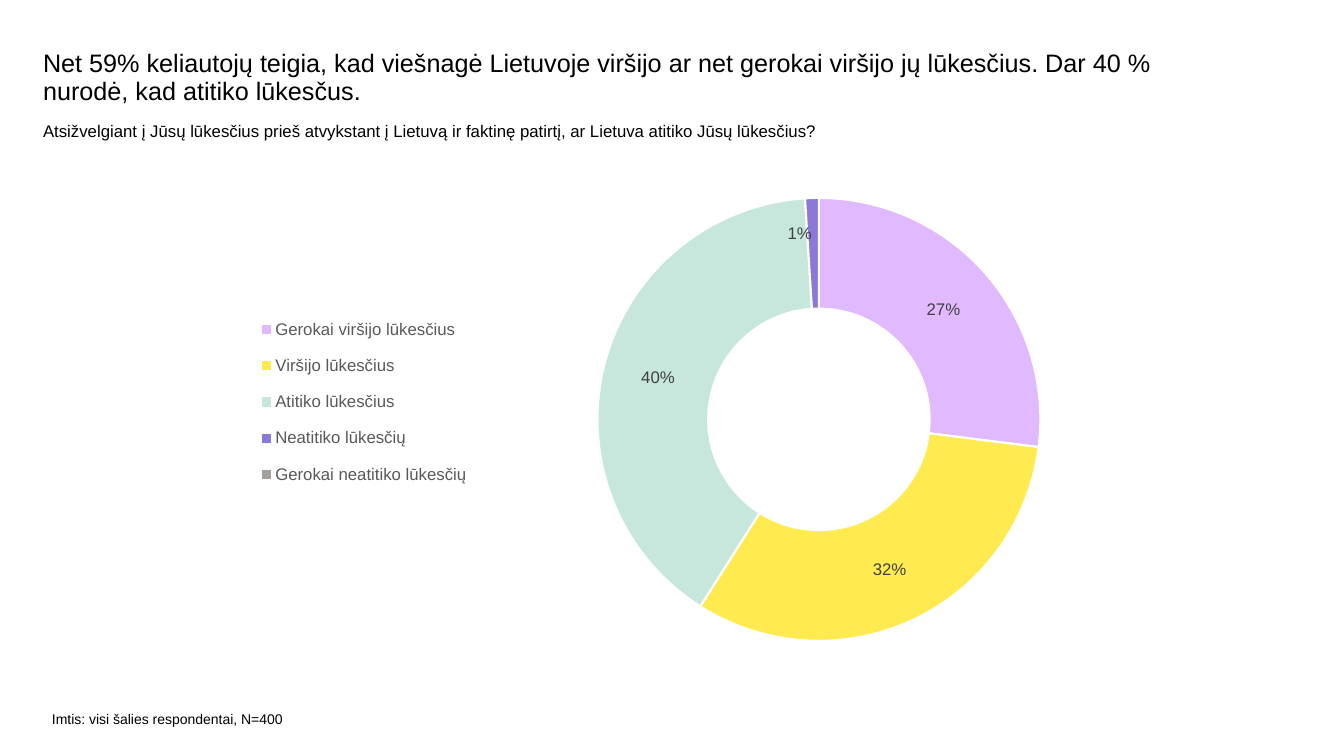
from lxml import etree
from pptx import Presentation
from pptx.chart.data import CategoryChartData
from pptx.dml.color import RGBColor
from pptx.enum.chart import XL_CHART_TYPE, XL_LEGEND_POSITION
from pptx.oxml.ns import qn
from pptx.util import Emu, Pt

DOUGHNUT = XL_CHART_TYPE.DOUGHNUT
LEGEND_BOTTOM = XL_LEGEND_POSITION.BOTTOM

FONT = "Arial"
TEXTS = [
    ("Net 59% keliautojų teigia, kad viešnagė Lietuvoje viršijo ar net gerokai viršijo jų lūkesčius. "
     "Dar 40 % nurodė, kad atitiko lūkesčus.", (43, 51, 1134, 61), 18, 0.9),
    ("Atsižvelgiant į Jūsų lūkesčius prieš atvykstant į Lietuvą ir faktinę patirtį, "
     "ar Lietuva atitiko Jūsų lūkesčius?", (43, 121, 1199, 61), 12, 1),
    ("Imtis: visi šalies respondentai, N=400", (52, 711, 389, 28), 10, 1),
]
ANSWERS = [
    ("Gerokai viršijo lūkesčius", 0.27, "E1B9FF"),
    ("Viršijo lūkesčius", 0.32, "FFEB50"),
    ("Atitiko lūkesčius", 0.4, "C7E6DC"),
    ("Neatitiko lūkesčių", 0.01, "8C78D7"),
    ("Gerokai neatitiko lūkesčių", 0, "A5A09B"),
]
CHART_BOX = (218, 165, 960, 516)
PLOT_BOX = (379, 33, 444, 443)
LEGEND_BOX = (43, 137, 206, 200)
LABEL_SHIFTS = {3: (-14, -20), 4: (15, 22)}
HOLE = 50
SCALE = 914400 / 100.8


def px(n):
    return Emu(round(n * SCALE))


def color(value):
    return RGBColor.from_string(value)


def set_font(font, size, value):
    font.name = FONT
    font.size = Pt(size)
    font.color.rgb = color(value)


def add_text(s, text, box, size=12, spacing=1, value="000000"):
    tf = s.shapes.add_textbox(*map(px, box)).text_frame
    tf.word_wrap = True
    tf.margin_left = tf.margin_right = tf.margin_top = tf.margin_bottom = 0
    p = tf.paragraphs[0]
    p.line_spacing = spacing
    r = p.add_run()
    r.text = text
    set_font(r.font, size, value)


def make_layout(lengths, inner=False):
    layout = etree.Element(qn("c:layout"))
    manual = etree.SubElement(layout, qn("c:manualLayout"))
    if inner:
        etree.SubElement(manual, qn("c:layoutTarget"), val="inner")
    if len(lengths) == 4:
        for tag in ("c:xMode", "c:yMode"):
            etree.SubElement(manual, qn(tag), val="edge")
    for i, (tag, n) in enumerate(zip("xywh", lengths)):
        share = n / CHART_BOX[2 + i % 2]
        etree.SubElement(manual, qn("c:" + tag), val=f"{share:.4f}")
    return layout


def place(parent, index, layout):
    for old in parent.findall(qn("c:layout")):
        parent.remove(old)
    parent.insert(index, layout)


def add_doughnut(s):
    data = CategoryChartData(number_format="0%")
    data.categories = [name for name, _, _ in ANSWERS]
    data.add_series("Series 1", [share for _, share, _ in ANSWERS])
    chart = s.shapes.add_chart(DOUGHNUT, *map(px, CHART_BOX), data).chart
    chart.has_title = False
    set_font(chart.font, 10, "000000")

    chart.has_legend = True
    legend = chart.legend
    legend.position = LEGEND_BOTTOM
    legend.include_in_layout = False
    set_font(legend.font, 12, "595959")
    root = chart.element
    place(root.find(".//" + qn("c:legend")), 1, make_layout(LEGEND_BOX))
    place(root.find(".//" + qn("c:plotArea")), 0, make_layout(PLOT_BOX, inner=True))
    root.find(".//" + qn("c:holeSize")).set("val", str(HOLE))

    series = chart.plots[0].series[0]
    for i, (_, _, fill) in enumerate(ANSWERS):
        fmt = series.points[i].format
        fmt.fill.solid()
        fmt.fill.fore_color.rgb = color(fill)
        fmt.line.color.rgb = color("FFFFFF")
        fmt.line.width = Pt(1.5)

    labels = series.data_labels
    labels.show_value = True
    labels.show_percentage = False
    labels.number_format = "0%"
    labels.number_format_is_linked = False
    set_font(labels.font, 12, "404040")
    for i in LABEL_SHIFTS:
        set_font(series.points[i].data_label.font, 12, "404040")
    for label, shift in zip(root.iter(qn("c:dLbl")), LABEL_SHIFTS.values()):
        place(label, 1, make_layout(shift))


def main():
    prs = Presentation()
    prs.slide_width, prs.slide_height = px(1344), px(756)
    s = prs.slides.add_slide(prs.slide_layouts[6])
    for text, box, size, spacing in TEXTS:
        add_text(s, text, box, size=size, spacing=spacing)
    add_doughnut(s)
    prs.save("out.pptx")


if __name__ == "__main__":
    main()
